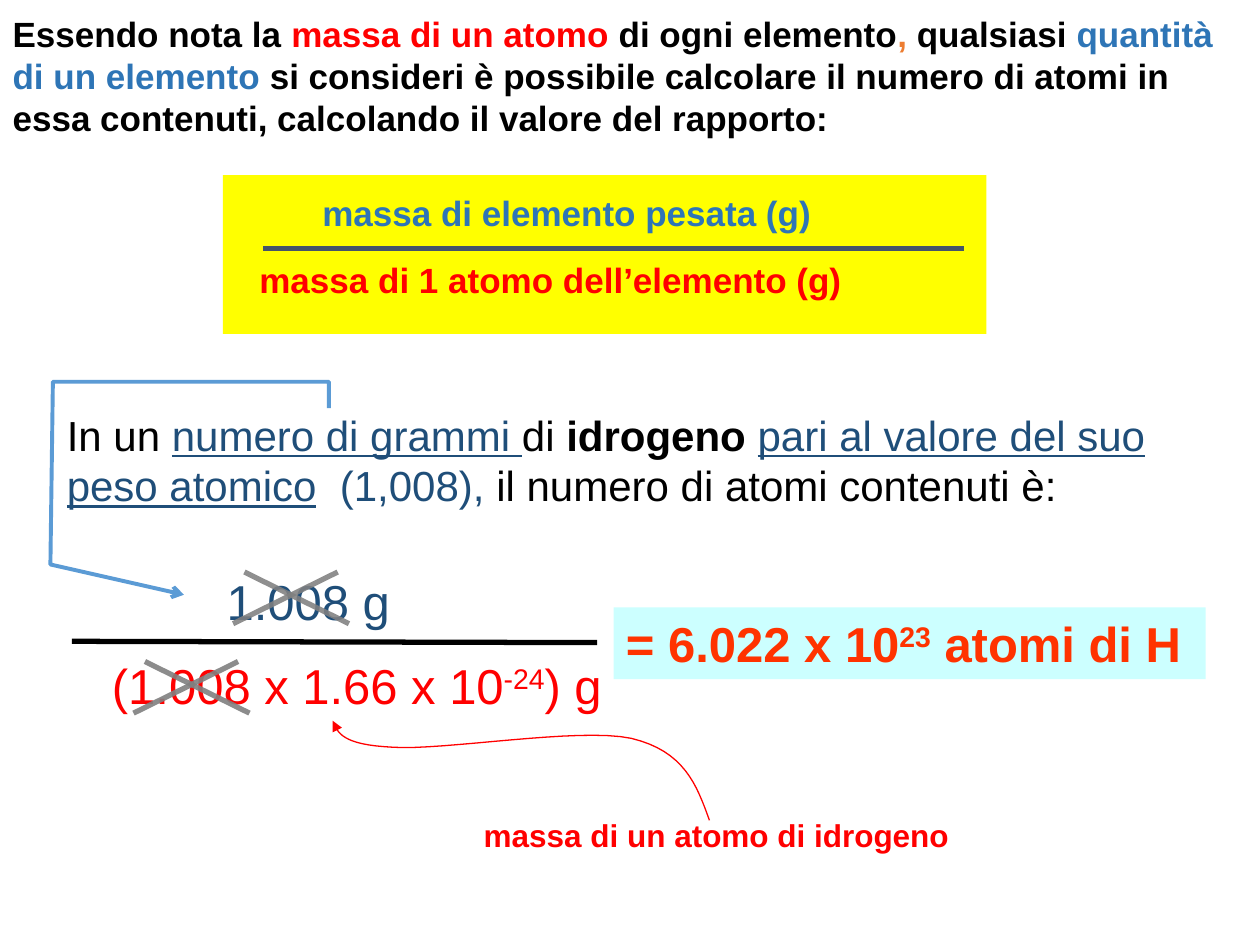
from dataclasses import dataclass
from lxml.etree import SubElement
from pptx import Presentation
from pptx.dml.color import RGBColor
from pptx.enum.shapes import MSO_CONNECTOR, MSO_SHAPE
from pptx.enum.text import MSO_ANCHOR, MSO_AUTO_SIZE, PP_ALIGN
from pptx.oxml.ns import qn
from pptx.util import Inches, Pt


@dataclass(frozen=True)
class Theme:
    font: str = "Arial"
    black: str = "000000"
    red: str = "FF0000"
    blue: str = "2E75B6"
    navy: str = "1F4E79"
    sky: str = "5B9BD5"
    slate: str = "44546A"
    gray: str = "808080"
    orange: str = "ED7D31"
    flame: str = "FF3300"
    yellow: str = "FFFF00"
    aqua: str = "CCFFFF"
    note: int = 18
    head: int = 20
    body: int = 24
    big: int = 28


T = Theme()
BOLD = {"bold": True}
LINK = {"underline": True}
SUPER = {"raised": True}


def rgb(hue):
    return RGBColor.from_string(hue)


def place(shape, box):
    for name, val in zip(("left", "top", "width", "height"), box):
        setattr(shape, name, Inches(val))


def write(shape, size, runs, **base):
    """Fill a shape with one paragraph of (text, colour, format) runs."""
    frame = shape.text_frame
    frame_look = {
        "word_wrap": True, "auto_size": MSO_AUTO_SIZE.NONE,
        "vertical_anchor": MSO_ANCHOR.TOP,
        "margin_left": Inches(0.1), "margin_right": Inches(0.1),
        "margin_top": Inches(0.05), "margin_bottom": Inches(0.05),
    }
    for name, val in frame_look.items():
        setattr(frame, name, val)
    para = frame.paragraphs[0]
    para.alignment = PP_ALIGN.LEFT
    para.space_before = Pt(0)
    for text, hue, *more in runs:
        run = para.add_run()
        run.text = text
        look = {"name": T.font, "size": Pt(size), "bold": False, **base}
        for extra in more:
            look.update(extra)
        if look.pop("raised", False):
            run._r.get_or_add_rPr().set("baseline", "30000")
        for name, val in look.items():
            setattr(run.font, name, val)
        run.font.color.rgb = rgb(hue)


def label(slide, box, size, runs, **base):
    shape = slide.shapes.add_textbox(*map(Inches, box))
    write(shape, size, runs, **base)


def panel(slide, box, hue):
    shape = slide.shapes.add_shape(MSO_SHAPE.RECTANGLE, *map(Inches, box))
    shape.shadow.inherit = False
    shape.fill.solid()
    shape.fill.fore_color.rgb = rgb(hue)
    shape.line.fill.background()
    return shape


def rule(slide, start, end, hue, width=3, alpha=None):
    line = slide.shapes.add_connector(
        MSO_CONNECTOR.STRAIGHT, *map(Inches, (*start, *end)))
    line.line.width = Pt(width)
    line.line.color.rgb = rgb(hue)
    props = line._element.spPr
    if alpha:
        tint = next(props.iter(qn("a:srgbClr")))
        SubElement(tint, qn("a:alpha"), val=str(alpha * 1000))
    SubElement(props, qn("a:effectLst"))


def cross(slide, left, top, alpha):
    """Strike out a number with two crossing lines."""
    low = top + 0.41
    rule(slide, (left + 0.83, top), (left, low), T.gray, alpha=alpha)
    rule(slide, (left + 0.09, top), (left + 0.92, low), T.gray, alpha=alpha)


def curve(start, *parts, steps=16):
    """Turn cubic Bezier parts into a list of points."""
    dots = [start]
    for one, two, end in parts:
        first = dots[-1]
        for step in range(1, steps + 1):
            t = step / steps
            u = 1 - t
            dots.append(tuple(
                u**3 * a + 3 * u * u * t * b + 3 * u * t * t * c + t**3 * d
                for a, b, c, d in zip(first, one, two, end)))
    return dots


def arrow(slide, dots, hue, width, tip):
    """Draw an open path that ends in an arrowhead."""
    pts = [(Inches(x), Inches(y)) for x, y in dots]
    path = slide.shapes.build_freeform(*pts[0])
    path.add_line_segments(pts[1:], close=False)
    shape = path.convert_to_shape()
    shape.shadow.inherit = False
    shape.fill.background()
    shape.line.width = Pt(width)
    shape.line.color.rgb = rgb(hue)
    SubElement(shape.line._get_or_add_ln(), qn("a:tailEnd"), type=tip)


def intro(slide):
    title = slide.shapes.title
    place(title, (0, 0.05, 10, 1.11))
    write(title, T.head, [
        ("Essendo nota la ", T.black), ("massa di un atomo", T.red),
        (" di ogni elemento", T.black), (", ", T.orange),
        ("qualsiasi ", T.black), ("quantità di un elemento ", T.blue),
        ("si consideri è possibile calcolare il numero di atomi in essa "
         "contenuti, calcolando il valore del rapporto:", T.black),
    ], bold=True)


def ratio(slide):
    panel(slide, (1.77, 1.39, 6.06, 1.26), T.yellow)
    label(slide, (1.96, 2, 4.91, 0.44), T.head,
          [("massa di 1 atomo dell’elemento (g)", T.red)], bold=True)
    label(slide, (2.46, 1.47, 4.16, 0.44), T.head,
          [("massa di elemento pesata (g)", T.blue)], bold=True)
    rule(slide, (2.09, 1.97), (7.65, 1.97), T.slate)


def case(slide):
    body = slide.placeholders[1]
    place(body, (0.43, 3.2, 8.98, 0.91))
    write(body, T.body, [
        ("In un ", T.black), ("numero di grammi ", T.navy, LINK),
        ("di ", T.black), ("idrogeno ", T.black, BOLD),
        ("pari al valore del suo peso atomico", T.navy, LINK),
        ("  ", T.black), ("(1,008), ", T.navy),
        ("il numero di atomi contenuti è:", T.black),
    ])
    props = body.text_frame.paragraphs[0]._p.get_or_add_pPr()
    for name in ("marL", "indent"):
        props.set(name, "0")
    SubElement(props, qn("a:buNone"))


def result(slide):
    answer = panel(slide, (4.87, 4.82, 4.7, 0.57), T.aqua)
    write(answer, T.big, [
        ("= 6.022 x 10", T.flame), ("23", T.flame, SUPER),
        (" atomi di H", T.flame)], bold=True)
    label(slide, (1.7, 4.49, 1.51, 0.57), T.big, [("1.008 g", T.navy)])
    label(slide, (0.79, 5.15, 4.19, 0.57), T.big, [
        ("(1.008 x 1.66 x 10", T.red), ("-24", T.red, SUPER),
        (") g", T.red)])
    rule(slide, (0.57, 5.09), (4.74, 5.1), T.black)
    cross(slide, 1.06, 5.25, 89)
    cross(slide, 1.85, 4.54, 87)


def notes(slide):
    label(slide, (3.74, 6.43, 4.49, 0.4), T.note,
          [("massa di un atomo di idrogeno", T.red)], bold=True)
    bend = curve(
        (5.63, 6.51),
        ((5.53, 6.23), (5.43, 5.96), (5.01, 5.86)),
        ((4.59, 5.77), (3.51, 5.96), (3.11, 5.93)),
        ((2.72, 5.91), (2.68, 5.82), (2.64, 5.72)))
    arrow(slide, bend, T.red, 0.75, "triangle")
    arrow(slide, [(2.61, 3.24), (2.61, 3.03), (0.42, 3.03),
                  (0.4, 4.48), (1.46, 4.72)], T.sky, 2.25, "arrow")


def main():
    deck = Presentation()
    deck.slide_width, deck.slide_height = Inches(10), Inches(7.5)
    slide = deck.slides.add_slide(deck.slide_layouts[1])
    for part in (intro, ratio, case, result, notes):
        part(slide)
    deck.save("out.pptx")


if __name__ == "__main__":
    main()
